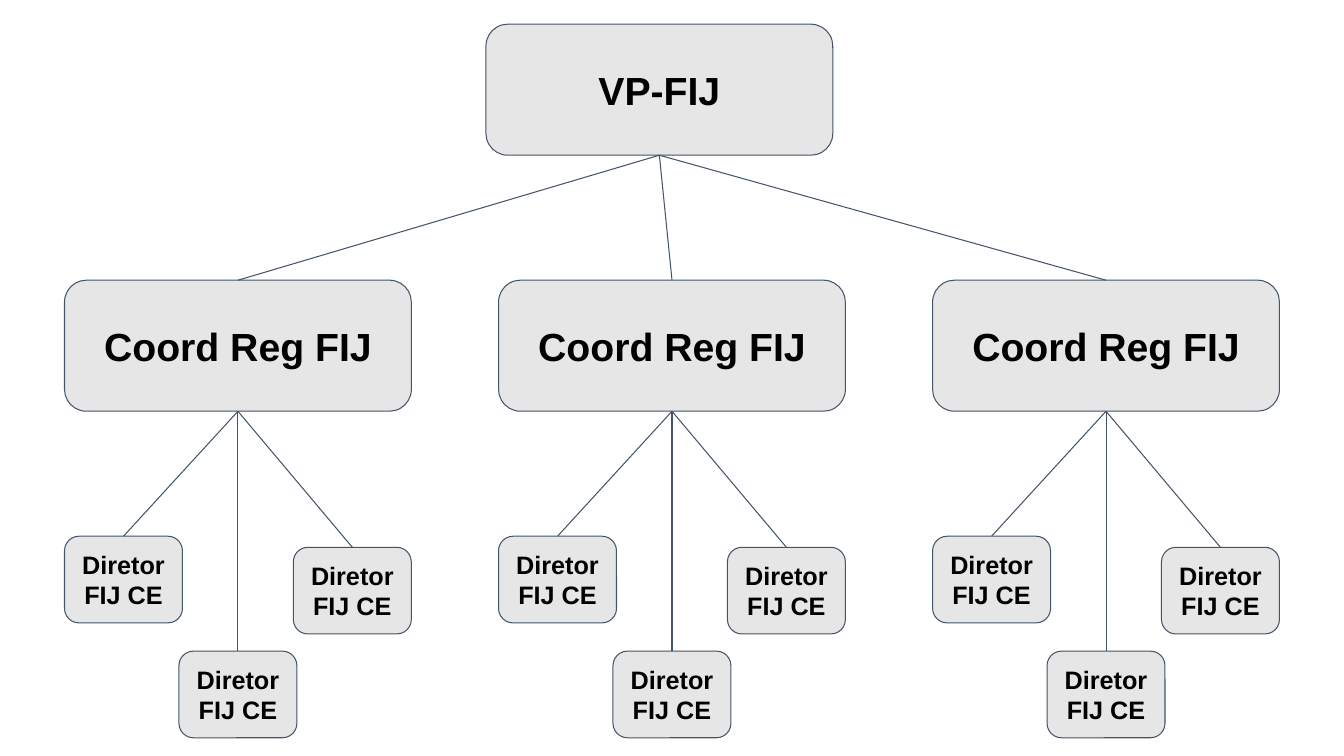
from lxml import etree
from pptx import Presentation
from pptx import util as u
from pptx.dml.color import RGBColor
from pptx.enum import shapes, text
from pptx.oxml.ns import qn

SLIDE_W, SLIDE_H = 13.33, 7.5
BIG_W, BIG_H = 3.44, 1.3
SMALL_W, SMALL_H = 1.17, 0.86
VP_LEFT, VP_TOP = 4.82, 0.24
COORD_TOP = 2.78
FIRST_LEFT, LAST_LEFT = 0.64, 9.25
COORD_COUNT = 3
DIRECTOR_TOPS = (5.32, 6.46, 5.43)
TOP_SITE, BOTTOM_SITE = 0, 2


def color(hex_string):
    return RGBColor.from_string(hex_string)


def write(frame, lines, size, font="Arial", bold=True, ink="000000"):
    """Fill a text frame with one centred paragraph per line."""
    for index, line in enumerate(lines):
        para = frame.paragraphs[0] if index == 0 else frame.add_paragraph()
        para.alignment = text.PP_ALIGN.CENTER
        span = para.add_run()
        span.text = line
        span.font.name = font
        span.font.size = u.Pt(size)
        span.font.bold = bold
        span.font.color.rgb = color(ink)


class OrgChart:
    fill = "E7E6E6"
    line = "44546A"
    line_width = 0.75
    inset = 0.1

    def __init__(self, slide):
        self.slide = slide

    def outline(self, line):
        line.color.rgb = color(self.line)
        line.width = u.Pt(self.line_width)

    def box(self, left, top, width, height, lines, size):
        box = self.slide.shapes.add_shape(
            shapes.MSO_SHAPE.ROUNDED_RECTANGLE,
            u.Inches(left), u.Inches(top), u.Inches(width), u.Inches(height))
        box.shadow.inherit = False
        box.fill.solid()
        box.fill.fore_color.rgb = color(self.fill)
        self.outline(box.line)
        frame = box.text_frame
        frame.word_wrap = True
        frame.vertical_anchor = text.MSO_ANCHOR.MIDDLE
        frame.margin_left = frame.margin_right = u.Inches(self.inset)
        frame.margin_top = frame.margin_bottom = u.Inches(self.inset)
        write(frame, lines, size)
        return box

    def big_box(self, left, top, label):
        return self.box(left, top, BIG_W, BIG_H, [label], 28)

    def small_box(self, left, top, lines):
        return self.box(left, top, SMALL_W, SMALL_H, lines, 18)

    def link(self, parent, child):
        """Join the bottom of the parent box to the top of the child box."""
        link = self.slide.shapes.add_connector(
            shapes.MSO_CONNECTOR.STRAIGHT, 0, 0, 0, 0)
        link.begin_connect(parent, BOTTOM_SITE)
        link.end_connect(child, TOP_SITE)
        self.outline(link.line)
        etree.SubElement(link._element.spPr, qn("a:effectLst"))


def main():
    deck = Presentation()
    deck.slide_width, deck.slide_height = u.Inches(SLIDE_W), u.Inches(SLIDE_H)
    page = deck.slides.add_slide(deck.slide_layouts[6])
    chart = OrgChart(page)

    vp = chart.big_box(VP_LEFT, VP_TOP, "VP-FIJ")
    column_step = (LAST_LEFT - FIRST_LEFT) / (COORD_COUNT - 1)
    director_step = (BIG_W - SMALL_W) / (len(DIRECTOR_TOPS) - 1)
    lefts = [FIRST_LEFT + column * column_step for column in range(COORD_COUNT)]

    coords = [chart.big_box(left, COORD_TOP, "Coord Reg FIJ") for left in lefts]
    pairs = [(vp, coord) for coord in coords]
    for left, coord in zip(lefts, coords):
        for index, top in enumerate(DIRECTOR_TOPS):
            director = chart.small_box(
                left + index * director_step, top, ["Diretor", "FIJ CE"])
            pairs.append((coord, director))

    for parent, child in pairs:
        chart.link(parent, child)
    deck.save("out.pptx")


if __name__ == "__main__":
    main()
